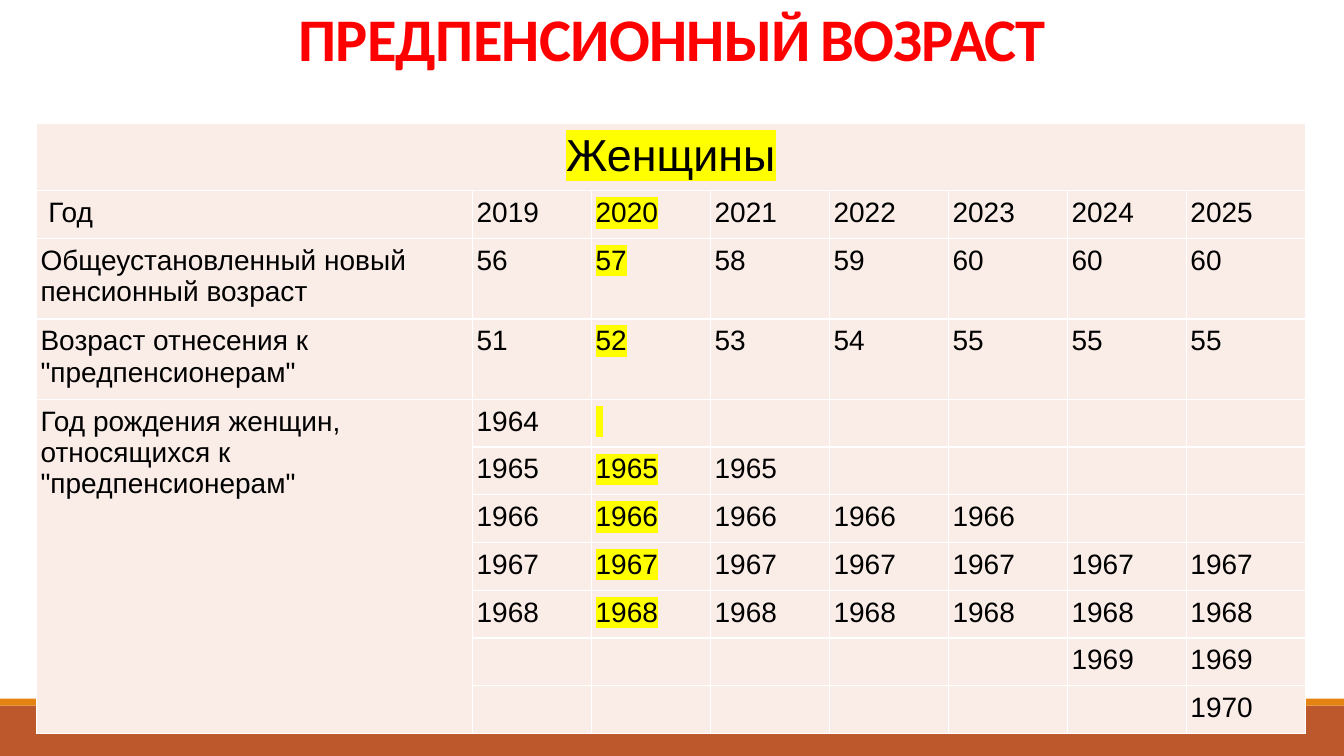
from lxml import etree
from pptx import Presentation
from pptx.dml.color import RGBColor
from pptx.enum import shapes, text
from pptx.oxml import ns
from pptx.util import Pt

COLORS = {
    "title": "FF0000", "text": "000000", "highlight": "FFFF00",
    "cell": "FAEDE7", "border": "FFFFFF", "band": "BD582C", "stripe": "E48312",
}
WIDTH, HEIGHT = 960, 540
YEARS = range(2019, 2026)
MARKED_YEAR = 2020
PENSION_AGES = [56, 57, 58, 59, 60, 60, 60]
AGE_LEAD = 5
BIRTH_YEARS = range(1964, 1971)
FIRST_BIRTH = [1964, 1965, 1965, 1966, 1966, 1967, 1967]
LAST_BIRTH = [1968, 1968, 1968, 1968, 1968, 1969, 1970]
MARKED_BLANK = " "


def color(name):
    return RGBColor.from_string(COLORS[name])


def add_color_element(parent, tag, name):
    element = etree.SubElement(parent, ns.qn(tag))
    etree.SubElement(element, ns.qn("a:srgbClr"), val=COLORS[name])
    return element


def add_run(paragraph, content, size, font, fill="text", marked=False):
    run = paragraph.add_run()
    run.text = content
    run.font.size = Pt(size)
    run.font.color.rgb = color(fill)
    if marked:
        add_color_element(run.font._element, "a:highlight", "highlight")
    run.font.name = font
    return run


def add_bar(slide, top, height, fill):
    bar = slide.shapes.add_shape(
        shapes.MSO_SHAPE.RECTANGLE, 0, Pt(top), Pt(WIDTH), Pt(height))
    bar.shadow.inherit = False
    bar.fill.solid()
    bar.fill.fore_color.rgb = color(fill)
    bar.line.fill.background()


def add_footer(slide, top, stripe_height):
    add_bar(slide, top + stripe_height, HEIGHT - top - stripe_height, "band")
    add_bar(slide, top, stripe_height, "stripe")


def add_title(slide, left, top, width, height):
    box = slide.shapes.add_textbox(Pt(left), Pt(top), Pt(width), Pt(height))
    frame = box.text_frame
    frame.word_wrap = True
    frame.vertical_anchor = text.MSO_ANCHOR.BOTTOM
    paragraph = frame.paragraphs[0]
    paragraph.alignment = text.PP_ALIGN.CENTER
    paragraph.line_spacing = 0.85
    for content, size in [("ПРЕДПЕНСИОННЫЙ", 43.2), (" ", 28.8), ("ВОЗРАСТ", 43.2)]:
        run = add_run(paragraph, content, size, "Calibri", "title")
        run.font.bold = True
        run.font._element.set("spc", "-50")


def style_cell(cell):
    """Give a cell its margins, white borders and fill."""
    cell.margin_left = cell.margin_right = Pt(3)
    cell.margin_top = cell.margin_bottom = Pt(4.7)
    properties = cell._tc.get_or_add_tcPr()
    for side in ("a:lnL", "a:lnR", "a:lnT", "a:lnB"):
        line = etree.SubElement(properties, ns.qn(side), w=str(Pt(1)))
        add_color_element(line, "a:solidFill", "border")
    cell.fill.solid()
    cell.fill.fore_color.rgb = color("cell")


def birth_row(birth_year):
    """List the birth year under each calendar year in which it qualifies."""
    row = [str(birth_year) if first <= birth_year <= last else ""
           for first, last in zip(FIRST_BIRTH, LAST_BIRTH)]
    if birth_year == BIRTH_YEARS[0]:
        row[YEARS.index(MARKED_YEAR)] = MARKED_BLANK
    return row


def table_rows():
    rows = [
        ["Женщины"] + [""] * len(YEARS),
        [" Год", *map(str, YEARS)],
        ["Общеустановленный новый пенсионный возраст", *map(str, PENSION_AGES)],
        ['Возраст отнесения к "предпенсионерам"',
         *(str(age - AGE_LEAD) for age in PENSION_AGES)],
    ]
    rows += [["", *birth_row(birth_year)] for birth_year in BIRTH_YEARS]
    rows[4][0] = 'Год рождения женщин, относящихся к "предпенсионерам"'
    return rows


def add_age_table(slide, left, top, width, height):
    rows = table_rows()
    year_width, header_height, label_height = 85, 45.8, 54.9
    line_height = (height - header_height - 2 * label_height) / (len(rows) - 3)
    heights = [header_height, line_height, label_height, label_height]
    heights += [line_height] * len(BIRTH_YEARS)
    frame = slide.shapes.add_table(
        len(rows), len(rows[0]), Pt(left), Pt(top), Pt(width), Pt(height))
    table = frame.table
    table.first_row = table.horz_banding = False
    for column in table.columns:
        column.width = Pt(year_width)
    table.columns[0].width = Pt(width - year_width * len(YEARS))
    marked_column = 1 + YEARS.index(MARKED_YEAR)
    for row_index, row in enumerate(rows):
        table.rows[row_index].height = Pt(heights[row_index])
        for column_index, content in enumerate(row):
            cell = table.cell(row_index, column_index)
            style_cell(cell)
            if content:
                add_run(cell.text_frame.paragraphs[0], content,
                        20 if row_index else 32, "Arial",
                        marked=row_index == 0 or column_index == marked_column)
    heading = table.cell(0, 0)
    heading.text_frame.paragraphs[0].alignment = text.PP_ALIGN.CENTER
    heading.merge(table.cell(0, len(YEARS)))
    table.cell(4, 0).merge(table.cell(len(rows) - 1, 0))


def main():
    presentation = Presentation()
    presentation.slide_width, presentation.slide_height = Pt(WIDTH), Pt(HEIGHT)
    slide = presentation.slides.add_slide(presentation.slide_layouts[6])
    add_footer(slide, 499, 5)
    add_title(slide, 66, 15, 828, 41)
    add_age_table(slide, 26, 88.5, 906.5, 428.5)
    presentation.save("out.pptx")


if __name__ == "__main__":
    main()
